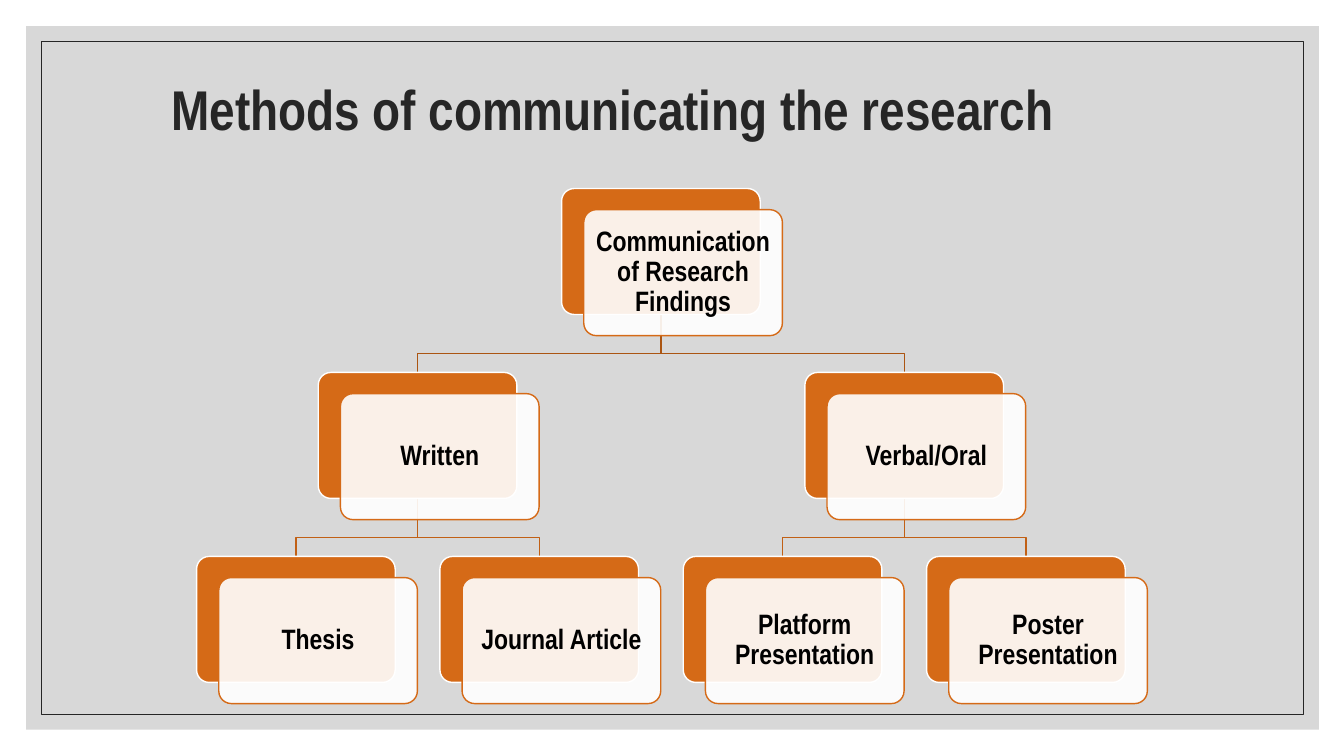
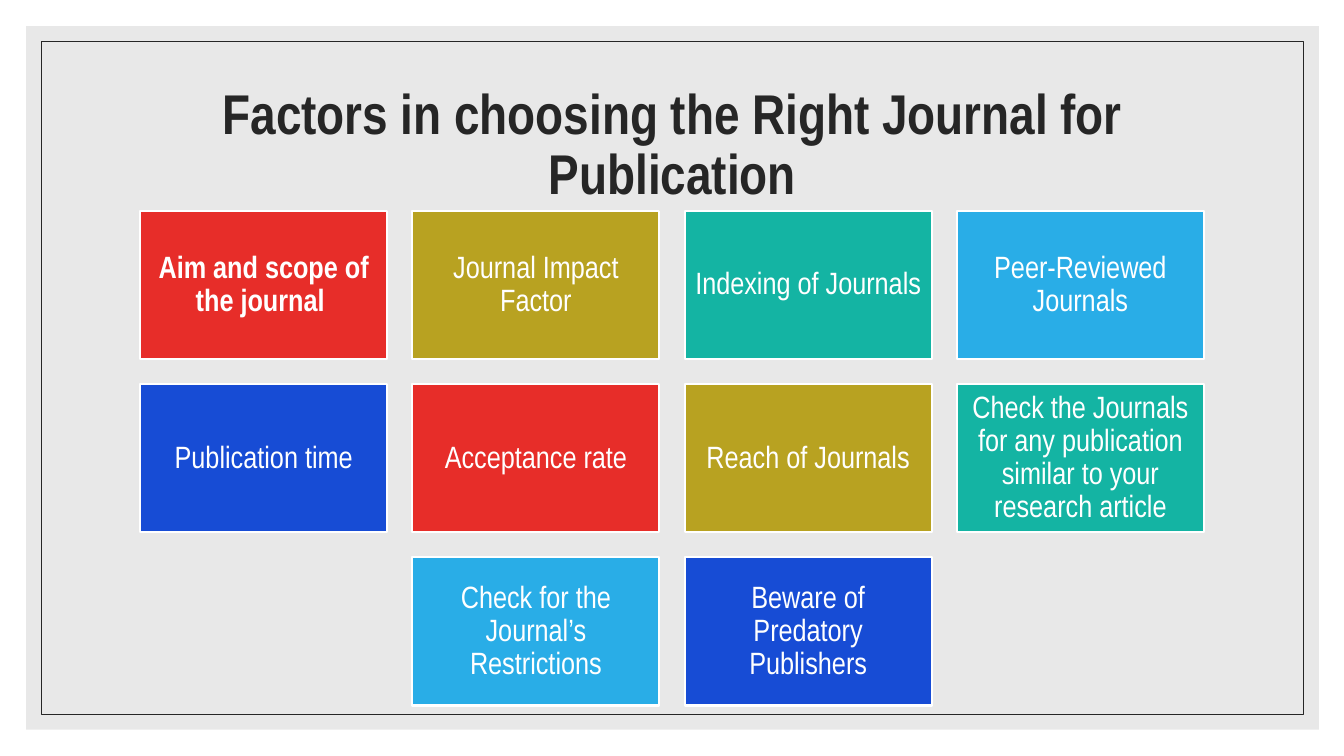
"""Build two slides: a tree of communication methods and a grid of journal factors."""
from itertools import cycle

from lxml import etree
from pptx import Presentation
from pptx.dml.color import RGBColor
from pptx.enum.shapes import MSO_SHAPE
from pptx.enum.text import MSO_ANCHOR, MSO_AUTO_SIZE, PP_ALIGN
from pptx.oxml.ns import qn
from pptx.util import Inches, Pt

RECTANGLE = MSO_SHAPE.RECTANGLE
ROUNDED = MSO_SHAPE.ROUNDED_RECTANGLE
MIDDLE = MSO_ANCHOR.MIDDLE
NO_AUTOFIT = MSO_AUTO_SIZE.NONE
LEFT = PP_ALIGN.LEFT
CENTER = PP_ALIGN.CENTER

FONT = "Arial Narrow"
DARK, WHITE, BLACK, ORANGE = "262626", "FFFFFF", "000000", "D56A17"
color = RGBColor.from_string


def add_box(page, kind, area, fill=None, line=None, weight=1, opacity=100):
    """Add a preset shape with the given fill, outline and opacity in percent."""
    box = page.shapes.add_shape(kind, *[Inches(length) for length in area])
    box.shadow.inherit = False
    if kind == ROUNDED:
        box.adjustments[0] = 0.1
    if fill:
        box.fill.solid()
        box.fill.fore_color.rgb = color(fill)
    else:
        box.fill.background()
    if opacity < 100:
        tint = box.element.spPr.find(qn("a:solidFill")).find(qn("a:srgbClr"))
        etree.SubElement(tint, qn("a:alpha")).set("val", str(opacity * 1000))
    if line:
        box.line.color.rgb = color(line)
        box.line.width = Pt(weight)
    else:
        box.line.fill.background()
    return box


def write_text(box, text, size, ink, bold=True, align=CENTER, inset=0.1):
    """Write one vertically centred paragraph into a shape."""
    frame = box.text_frame
    frame.text = text
    frame.word_wrap = True
    frame.auto_size = NO_AUTOFIT
    frame.vertical_anchor = MIDDLE
    frame.margin_left = frame.margin_right = Inches(inset)
    frame.margin_top = frame.margin_bottom = Inches(min(inset, 0.09))
    para = frame.paragraphs[0]
    para.alignment = align
    para.line_spacing = 0.9
    para.font.name = FONT
    para.font.size = Pt(size)
    para.font.bold = bold
    para.font.color.rgb = color(ink)


deck = Presentation()
deck.slide_width = Inches(13.33)
deck.slide_height = Inches(7.5)
title_only = deck.slide_layouts[5]

openings = [
    ("Methods of communicating the research", 1.6, 0.36, LEFT, "BFBFBF"),
    ("Factors in choosing the Right Journal for Publication", 1.17, 0.7, CENTER, "D9D9D9"),
]
pages = []
for heading, left, top, align, shade in openings:
    page = deck.slides.add_slide(title_only)
    add_box(page, RECTANGLE, (0.26, 0.26, 12.82, 6.98), shade, opacity=60)
    add_box(page, RECTANGLE, (0.41, 0.41, 12.52, 6.68), line=DARK, weight=0.5)
    title = page.shapes.title
    title.left, title.top = Inches(left), Inches(top)
    title.width, title.height = Inches(11), Inches(1.5)
    write_text(title, heading, 40, DARK, align=align)
    title.element.getparent().append(title.element)
    pages.append(page)
tree_page, grid_page = pages

CARD_WIDTH, CARD_HEIGHT = 1.97, 1.25
COLUMN_PITCH = 7.24 / 3
LEVEL_PITCH = 3.65 / 2
tree = {
    "Communication of Research Findings": (1.5, 0, ["Verbal/Oral", "Written"]),
    "Written": (0.5, 1, ["Journal Article", "Thesis"]),
    "Thesis": (0, 2, []),
    "Journal Article": (1, 2, []),
    "Verbal/Oral": (2.5, 1, ["Poster Presentation", "Platform Presentation"]),
    "Platform Presentation": (2, 2, []),
    "Poster Presentation": (3, 2, []),
}
branch_colors = ["AB5512", "C16015"]

corners = {
    label: (1.95 + COLUMN_PITCH * column, 1.87 + LEVEL_PITCH * level)
    for label, (column, level, children) in tree.items()
}

for label, (column, level, children) in tree.items():
    left, top = corners[label]
    start_x = Inches(left + CARD_WIDTH / 2)
    start_y = Inches(top + CARD_HEIGHT)
    bar = start_y + Inches(0.39)
    for child in children:
        child_left, child_top = corners[child]
        end_x = Inches(child_left + CARD_WIDTH / 2)
        outline = tree_page.shapes.build_freeform(start_x, start_y)
        outline.add_line_segments(
            [(start_x, bar), (end_x, bar), (end_x, Inches(child_top))], close=False)
        branch = outline.convert_to_shape()
        branch.shadow.inherit = False
        branch.fill.background()
        branch.line.color.rgb = color(branch_colors[level])
        branch.line.width = Pt(1)

for label, (left, top) in corners.items():
    add_box(tree_page, ROUNDED, (left, top, CARD_WIDTH, CARD_HEIGHT), ORANGE, WHITE)
    front_area = (left + 0.22, top + 0.21, CARD_WIDTH, CARD_HEIGHT)
    front = add_box(tree_page, ROUNDED, front_area, WHITE, ORANGE, opacity=90)
    write_text(front, label, 20, BLACK, inset=0.08)

factor_rows = [
    ["Aim and scope of the journal ", "Journal Impact Factor",
     "Indexing of Journals", "Peer-Reviewed Journals"],
    ["Publication time", "Acceptance rate", "Reach of Journals",
     "Check the Journals for any publication similar to your research article"],
    ["Check for the Journal’s Restrictions", "Beware of Predatory Publishers"],
]
tile_colors = cycle(["E72D29", "B8A221", "14B4A3", "29ADE7", "174CD5"])
for row, factors in enumerate(factor_rows):
    indent = (4 - len(factors)) / 2
    for column, factor in enumerate(factors):
        area = (1.39 + 2.7 * (column + indent), 2.09 + 1.72 * row, 2.45, 1.47)
        tile = add_box(grid_page, RECTANGLE, area, next(tile_colors), WHITE, 1.5)
        write_text(tile, factor, 22, WHITE, bold=row == column == 0, inset=0.09)

deck.save("out.pptx")
